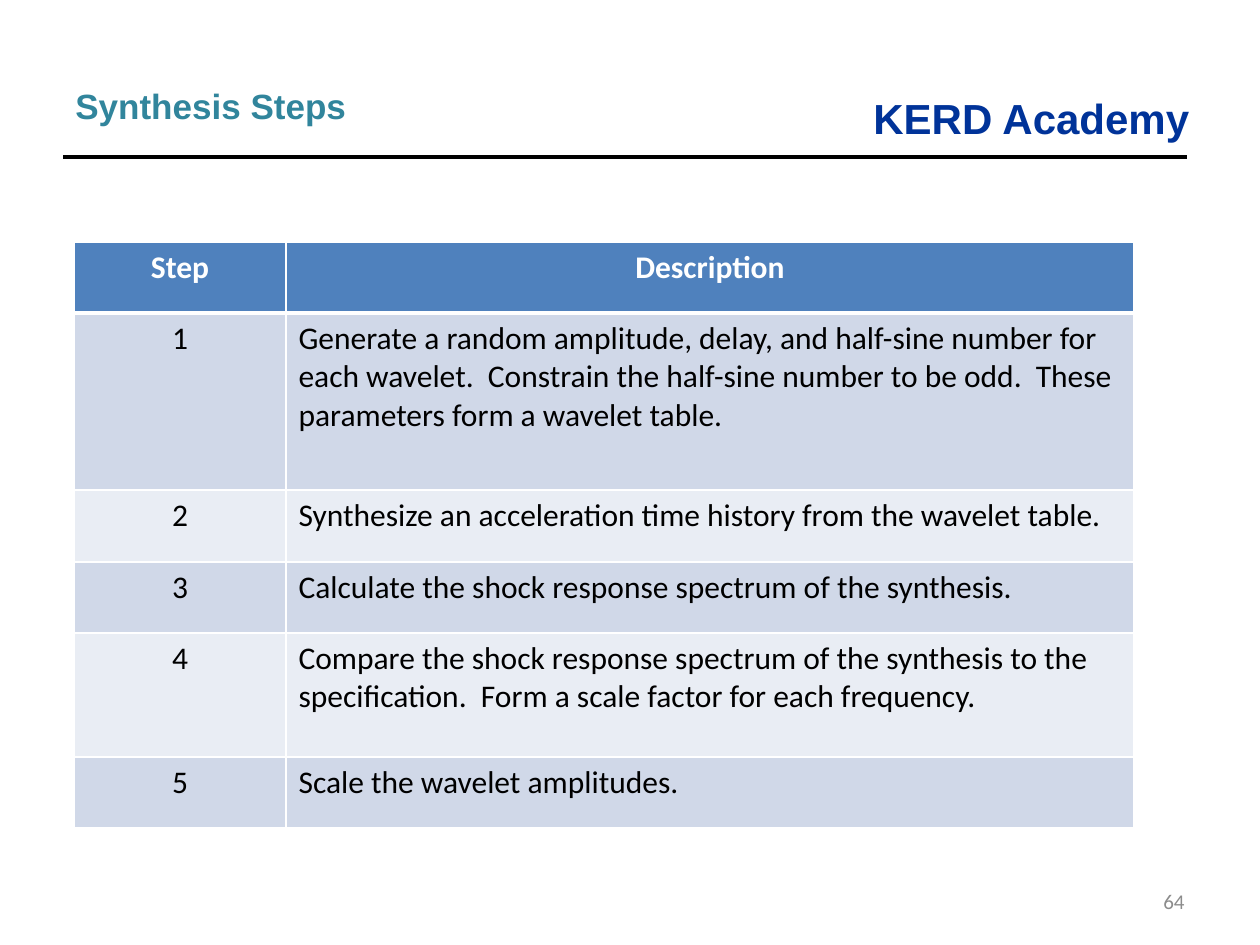
from lxml.etree import SubElement
from pptx import Presentation
from pptx.dml.color import RGBColor
from pptx.enum.shapes import MSO_CONNECTOR
from pptx.enum.text import MSO_ANCHOR, MSO_AUTO_SIZE, PP_ALIGN
from pptx.oxml import parse_xml
from pptx.oxml.ns import nsdecls, qn
from pptx.util import Emu, Pt

EMU_PER_PX = 914400 / 126

WHITE = RGBColor(0xFF, 0xFF, 0xFF)
BLACK = RGBColor(0x00, 0x00, 0x00)
NAVY = RGBColor(0x00, 0x33, 0x99)
TEAL = RGBColor(0x31, 0x85, 0x9C)
GRAY = RGBColor(0x8C, 0x8C, 0x8C)
HEADER_BLUE = RGBColor(0x4F, 0x81, 0xBD)
BAND_DARK = RGBColor(0xD0, 0xD8, 0xE8)
BAND_LIGHT = RGBColor(0xE9, 0xED, 0xF4)

STEPS = [
    "Generate a random amplitude, delay, and half-sine number for each wavelet.  "
    "Constrain the half-sine number to be odd.  These parameters form a wavelet table.",
    "Synthesize an acceleration time history from the wavelet table.",
    "Calculate the shock response spectrum of the synthesis.",
    "Compare the shock response spectrum of the synthesis to the specification.  "
    "Form a scale factor for each frequency.",
    "Scale the wavelet amplitudes.",
]
COL_WIDTHS = [212, 848]
ROW_HEIGHTS = [71, 177, 72, 71, 124, 71]


def px(n):
    return Emu(round(n * EMU_PER_PX))


def write_text(tf, text, color, font, para=None):
    p = tf.paragraphs[0]
    for name, value in (para or {}).items():
        setattr(p, name, value)
    r = p.add_run()
    r.text = text
    for name, value in font.items():
        setattr(r.font, name, value)
    r.font.color.rgb = color


def add_text(s, box, text, color, font, para=None, frame=None):
    tf = s.shapes.add_textbox(*map(px, box)).text_frame
    for name, value in {"word_wrap": True, **(frame or {})}.items():
        setattr(tf, name, value)
    write_text(tf, text, color, font, para)


def add_rule(s, left, right, y):
    line = s.shapes.add_connector(
        MSO_CONNECTOR.STRAIGHT, px(left), px(y), px(right), px(y))
    line.line.color.rgb = BLACK
    line.line.width = Pt(2.25)
    SubElement(line._element.spPr, qn("a:effectLst"))


def set_borders(cell, widths):
    """Draw white borders; widths are points for left, right, top, bottom."""
    tc_pr = cell._tc.get_or_add_tcPr()
    for i, (side, width) in enumerate(zip("LRTB", widths)):
        tc_pr.insert(i, parse_xml(
            f'<a:ln{side} {nsdecls("a")} w="{Pt(width)}"><a:solidFill>'
            f'<a:srgbClr val="{WHITE}"/></a:solidFill></a:ln{side}>'))


def add_steps_table(s, left, top):
    rows = [("Step", "Description")]
    rows += [(str(n), text) for n, text in enumerate(STEPS, 1)]
    table = s.shapes.add_table(
        len(rows), len(COL_WIDTHS), px(left), px(top),
        px(sum(COL_WIDTHS)), px(sum(ROW_HEIGHTS))).table
    for col, width in zip(table.columns, COL_WIDTHS):
        col.width = px(width)
    for i, (row, height) in enumerate(zip(rows, ROW_HEIGHTS)):
        table.rows[i].height = px(height)
        header = i == 0
        fill = HEADER_BLUE if header else BAND_DARK if i % 2 else BAND_LIGHT
        for j, text in enumerate(row):
            cell = table.cell(i, j)
            cell.fill.solid()
            cell.fill.fore_color.rgb = fill
            set_borders(cell, (1, 1, 3 if i == 1 else 1, 3 if header else 1))
            centred = header or j == 0
            write_text(
                cell.text_frame, text, WHITE if header else BLACK,
                {"name": "Calibri", "size": Pt(18), "bold": header},
                {"alignment": PP_ALIGN.CENTER if centred else PP_ALIGN.LEFT})


def main():
    prs = Presentation()
    prs.slide_width, prs.slide_height = px(1260), px(945)
    s = prs.slides.add_slide(prs.slide_layouts[6])
    grow = {"auto_size": MSO_AUTO_SIZE.SHAPE_TO_FIT_TEXT}

    add_text(s, (861, 86, 343, 63), "KERD Academy", NAVY,
             {"name": "Arial", "size": Pt(24), "bold": True},
             frame={**grow, "word_wrap": False})
    add_rule(s, 63, 1187, 157)
    add_text(s, (903, 876, 294, 50), "64", GRAY,
             {"name": "Calibri", "size": Pt(12)},
             {"alignment": PP_ALIGN.RIGHT},
             {"vertical_anchor": MSO_ANCHOR.MIDDLE})
    add_text(s, (63, 78, 630, 55), "Synthesis Steps", TEAL,
             {"name": "Arial", "size": Pt(20), "bold": True},
             {"space_before": Pt(2), "space_after": Pt(2)}, grow)
    add_steps_table(s, 74, 242)

    prs.save("out.pptx")


if __name__ == "__main__":
    main()
